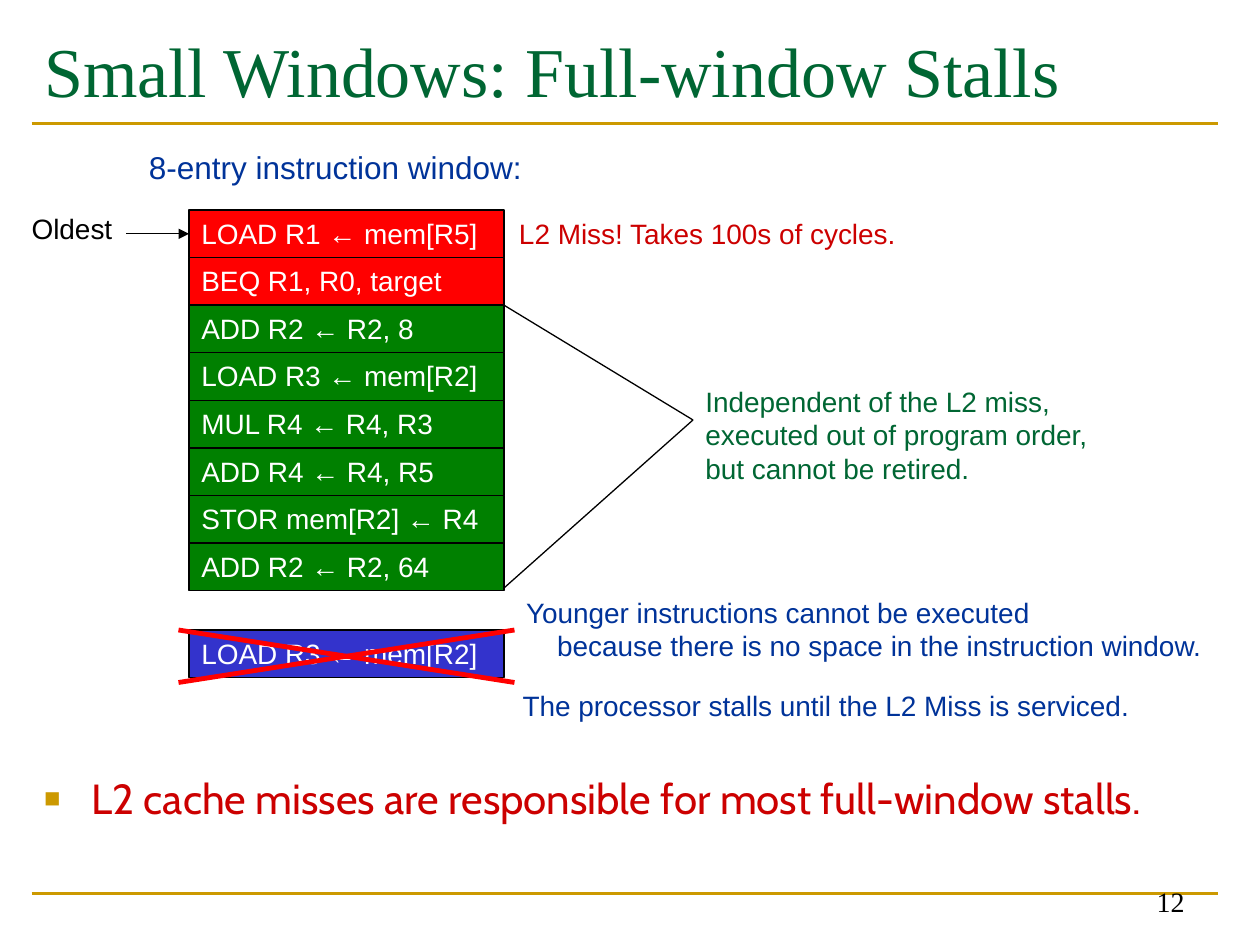
"""Build the slide on full-window stalls in small instruction windows."""
from lxml.etree import SubElement
from pptx import Presentation
from pptx.dml.color import RGBColor as Rgb
from pptx.enum.shapes import MSO_CONNECTOR as Connector, MSO_SHAPE as Shape
from pptx.enum.text import MSO_ANCHOR as Anchor, MSO_AUTO_SIZE as AutoSize, PP_ALIGN as Align
from pptx.oxml.ns import qn
from pptx.util import Pt

COLORS = {
    "black": "000000", "white": "FFFFFF", "gold": "CC9900", "title": "006633",
    "navy": "003399", "crimson": "CC0000", "red": "FF0000", "green": "008000",
    "blue": "3333CC",
}
SANS, SERIF, ROUND = "Arial", "Times New Roman", "Cabin"
WINDOW_LEFT, WINDOW_TOP, WINDOW_WIDTH = 108, 120, 180
ROW_HEIGHT = 27.2
INSTRUCTIONS = [
    ("LOAD R1 ← mem[R5]", "red"),
    ("BEQ R1, R0, target", "red"),
    ("ADD R2 ← R2, 8", "green"),
    ("LOAD R3 ← mem[R2]", "green"),
    ("MUL R4 ← R4, R3", "green"),
    ("ADD R4 ← R4, R5", "green"),
    ("STOR mem[R2] ← R4", "green"),
    ("ADD R2 ← R2, 64", "green"),
]
NOTES = [
    ((11, 117.4, 60.5, 26.6), ["Oldest"], "black", 16),
    ((289.5, 120.4, 232.5, 26.6), ["L2 Miss! Takes 100s of cycles."], "crimson", 16),
    ((78, 81, 227.5, 29), ["8-entry instruction window:"], "navy", 18),
    ((396, 216, 289.5, 65), ["Independent of the L2 miss,", "executed out of program order,",
                             "but cannot be retired."], "title", 16),
    ((291.5, 390.2, 362, 26.6), ["The processor stalls until the L2 Miss is serviced."], "navy", 16),
]


class SlideBuilder:
    """Hold the style and the current slide."""

    def __init__(self, slide, font=SANS, size=16):
        self.slide, self.font, self.size = slide, font, size

    def fill_frame(self, frame, lines, color, size=None, font=None, align=Align.LEFT,
                   indents=None, **options):
        for name, value in {"vertical_anchor": Anchor.TOP, **options}.items():
            setattr(frame, name, value)
        for index, line in enumerate(lines):
            para = frame.paragraphs[0] if index == 0 else frame.add_paragraph()
            para.alignment = align
            span = para.add_run()
            span.text = line
            for name, value in {"size": Pt(size or self.size), "name": font or self.font}.items():
                setattr(span.font, name, value)
            span.font.color.rgb = Rgb.from_string(COLORS[color])
            if indents:
                para._p.get_or_add_pPr().set("marL", str(Pt(indents[index])))

    def text(self, place, lines, color, **options):
        box = self.slide.shapes.add_textbox(*map(Pt, place))
        self.fill_frame(box.text_frame, lines, color, **{"word_wrap": False, **options})

    def placeholder(self, holder, place, line, color, size, font):
        for name, value in zip(("left", "top", "width", "height"), place):
            setattr(holder, name, Pt(value))
        self.fill_frame(holder.text_frame, [line], color, size, font, auto_size=AutoSize.NONE)
        return holder.text_frame.paragraphs[0]

    def bullet(self, para, color, char, percent, indent):
        properties = para._p.get_or_add_pPr()
        for name, value in {"marL": indent, "indent": -indent}.items():
            properties.set(name, str(Pt(value)))
        tint = SubElement(properties, qn("a:buClr"))
        SubElement(tint, qn("a:srgbClr"), val=COLORS[color])
        SubElement(properties, qn("a:buSzPct"), val=str(percent * 1000))
        SubElement(properties, qn("a:buFont"), typeface=SANS)
        SubElement(properties, qn("a:buChar"), char=char)

    def instruction(self, top, line, fill):
        place = (WINDOW_LEFT, top, WINDOW_WIDTH, ROW_HEIGHT)
        box = self.slide.shapes.add_shape(Shape.RECTANGLE, *map(Pt, place))
        box.shadow.inherit = False
        box.fill.solid()
        box.fill.fore_color.rgb = Rgb.from_string(COLORS[fill])
        box.line.color.rgb = Rgb.from_string(COLORS["black"])
        box.line.width = Pt(0.75)
        self.fill_frame(box.text_frame, [line], "white", word_wrap=True)
        return box

    def line(self, start, end, color="black", width=0.75, arrow=False, target=None):
        link = self.slide.shapes.add_connector(Connector.STRAIGHT, *map(Pt, start + end))
        link.line.color.rgb = Rgb.from_string(COLORS[color])
        link.line.width = Pt(width)
        properties = link._element.spPr
        if arrow:
            SubElement(properties.find(qn("a:ln")), qn("a:tailEnd"), type="triangle")
        SubElement(properties, qn("a:effectLst"))
        if target is not None:
            link.end_connect(target, 1)


def main():
    deck = Presentation()
    deck.slide_width, deck.slide_height = Pt(720), Pt(540)
    page = deck.slides.add_slide(deck.slide_layouts[1])
    builder = SlideBuilder(page)

    for rule_top in (510.5, 70.6):
        builder.line((18, rule_top), (696, rule_top), "gold", 1.5)
    builder.text((516, 492, 168, 36), ["12"], "black", font=SERIF, align=Align.RIGHT,
                 vertical_anchor=Anchor.BOTTOM, word_wrap=True)
    builder.placeholder(page.shapes.title, (18, 12, 678, 84),
                        "Small Windows: Full-window Stalls", "title", 40, SERIF)
    summary = builder.placeholder(page.placeholders[1], (18, 438, 678, 54),
                                  "L2 cache misses are responsible for most full-window stalls.",
                                  "crimson", 24, ROUND)
    builder.bullet(summary, "gold", "■", 65, 27)

    rows = [builder.instruction(WINDOW_TOP + index * ROW_HEIGHT, line, fill)
            for index, (line, fill) in enumerate(INSTRUCTIONS)]
    for place, lines, color, size in NOTES:
        builder.text(place, lines, color, size=size)
    builder.text((293.5, 336.5, 402.5, 46), ["Younger instructions cannot be executed",
                 "because there is no space in the instruction window."], "navy", indents=(0, 17.8))

    oldest_middle = WINDOW_TOP + ROW_HEIGHT / 2
    builder.line((72, oldest_middle), (WINDOW_LEFT, oldest_middle), arrow=True, target=rows[0])
    window_right = WINDOW_LEFT + WINDOW_WIDTH
    for corner_top in (WINDOW_TOP + 2 * ROW_HEIGHT, 336):
        builder.line((window_right, corner_top), (396, 240))

    builder.instruction(360, "LOAD R3 ← mem[R2]", "blue")
    for start_top, end_top in ((390, 360), (360, 390)):
        builder.line((102, start_top), (294, end_top), "red", 2.75)

    deck.save("out.pptx")


if __name__ == "__main__":
    main()
